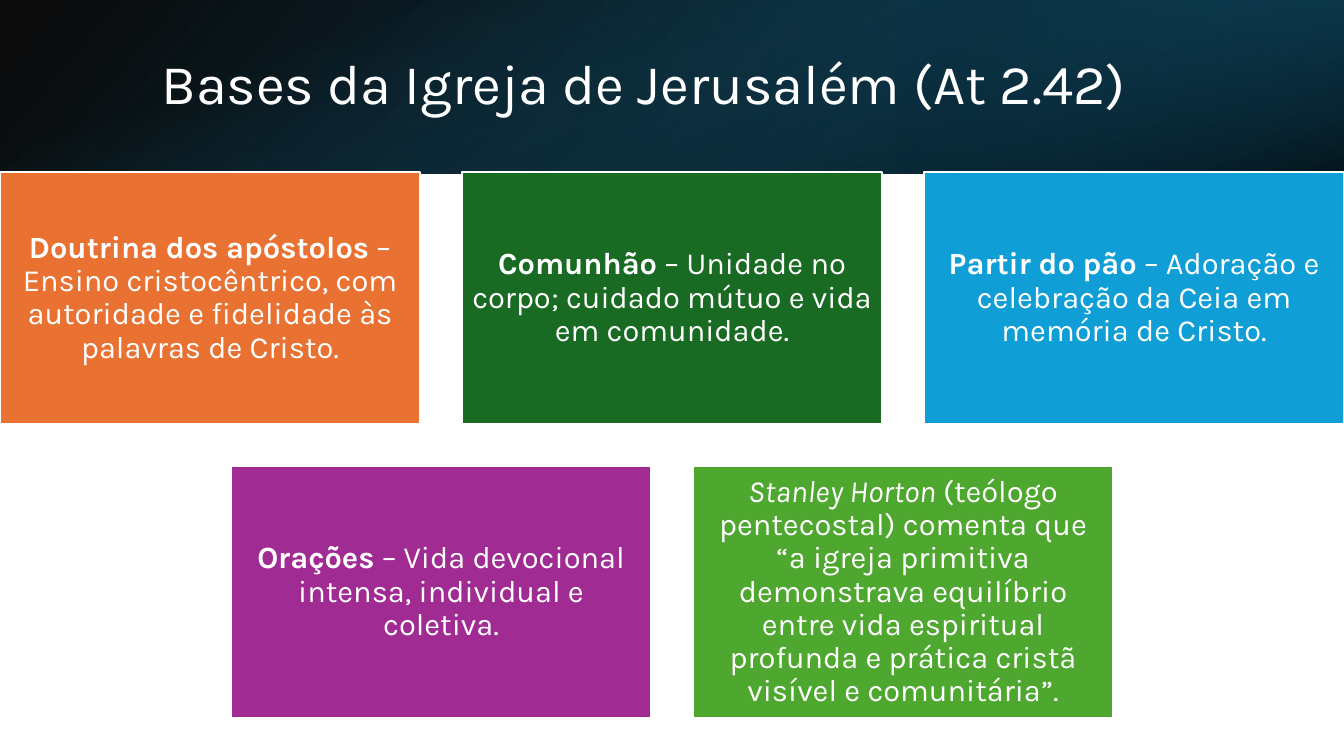
import pptx
import pptx.util
import pptx.dml.color
import pptx.enum.shapes
import pptx.enum.text
import pptx.oxml
import pptx.oxml.ns

RGB = pptx.dml.color.RGBColor
WHITE = RGB(0xFF, 0xFF, 0xFF)
BLACK = RGB(0x00, 0x00, 0x00)
NAVY = RGB(0x10, 0x48, 0x62)
DARK_TEAL = RGB(0x0B, 0x30, 0x41)
TEAL = RGB(0x15, 0x60, 0x82)
ORANGE = RGB(0xE9, 0x71, 0x32)
DARK_GREEN = RGB(0x19, 0x6B, 0x24)
BLUE = RGB(0x0F, 0x9E, 0xD5)
PURPLE = RGB(0xA0, 0x2B, 0x93)
GREEN = RGB(0x4E, 0xA7, 0x2E)

FONT = "Karla"
W, H = 13.33, 7.5
BAND_H = 0.23 * H

# Three cards and two gaps of a tenth of a card fill the width
CARD_W = W / 3.2
CARD_H = 0.6 * CARD_W
GAP = 0.1 * CARD_W
CARDS_TOP = 0.228 * H

CARD_ROWS = [
    [
        (ORANGE, "Doutrina dos apóstolos",
         " – Ensino cristocêntrico, com autoridade e fidelidade às palavras de Cristo.", "bold"),
        (DARK_GREEN, "Comunhão",
         " – Unidade no corpo; cuidado mútuo e vida em comunidade.", "bold"),
        (BLUE, "Partir do pão",
         " – Adoração e celebração da Ceia em memória de Cristo.", "bold"),
    ],
    [
        (PURPLE, "Orações",
         " – Vida devocional intensa, individual e coletiva.", "bold"),
        (GREEN, "Stanley Horton",
         " (teólogo pentecostal) comenta que “a igreja primitiva demonstrava equilíbrio"
         " entre vida espiritual profunda e prática cristã visível e comunitária”.", "italic"),
    ],
]


def inches(*lengths):
    return [pptx.util.Inches(length) for length in lengths]


def add_rect(s, left, top, width, height):
    sp = s.shapes.add_shape(pptx.enum.shapes.MSO_SHAPE.RECTANGLE,
                            *inches(left, top, width, height))
    sp.shadow.inherit = False
    return sp


def add_gradient_band(s, box, stops, angle, rotation=0, flip=False):
    """Add a borderless rectangle; stops are (position, colour, opacity %), angle is clockwise."""
    sp = add_rect(s, *box)
    sp.rotation = rotation
    if flip:
        sp._element.spPr.xfrm.set("flipH", "1")
    sp.line.fill.background()
    sp.fill.gradient()
    sp.fill.gradient_angle = 360 - angle
    for stop, (position, color, _) in zip(sp.fill.gradient_stops, stops):
        stop.position = position
        stop.color.rgb = color
    colors = sp._element.spPr.iter(pptx.oxml.ns.qn("a:srgbClr"))
    for color, (_, _, opacity) in zip(list(colors), stops):
        alpha = pptx.oxml.parse_xml("<a:alpha %s/>" % pptx.oxml.ns.nsdecls("a"))
        alpha.set("val", str(opacity * 1000))
        color.append(alpha)


def add_run(p, text, size, style=None):
    r = p.add_run()
    r.text = text
    r.font.name = FONT
    r.font.size = pptx.util.Pt(size)
    r.font.color.rgb = WHITE
    r.font.bold = style == "bold"
    r.font.italic = style == "italic"


def start_text(sp, align):
    """Set up a middle-anchored frame and return its first paragraph."""
    tf = sp.text_frame
    tf.word_wrap = True
    tf.auto_size = pptx.enum.text.MSO_AUTO_SIZE.NONE
    tf.vertical_anchor = pptx.enum.text.MSO_ANCHOR.MIDDLE
    p = tf.paragraphs[0]
    p.alignment = align
    p.line_spacing = 0.9
    return p


def set_title(s, text):
    title = s.shapes.title
    title.left, title.top, title.width, title.height = inches(1.5, 0.38, 10.98, 0.96)
    add_run(start_text(title, pptx.enum.text.PP_ALIGN.LEFT), text, 40)
    s.shapes._spTree.append(title._element)  # in front of the bands


def add_card(s, left, top, color, lead, body, lead_style):
    sp = add_rect(s, left, top, CARD_W, CARD_H)
    sp.fill.solid()
    sp.fill.fore_color.rgb = color
    sp.line.color.rgb = WHITE
    sp.line.width = pptx.util.Pt(1.5)
    p = start_text(sp, pptx.enum.text.PP_ALIGN.CENTER)
    tf = sp.text_frame
    tf.margin_left, tf.margin_top, tf.margin_right, tf.margin_bottom = inches(*[0.09] * 4)
    add_run(p, lead, 22, lead_style)
    add_run(p, body, 22)


def add_card_row(s, row, cards):
    """Add one row of cards, centred on the slide."""
    step = CARD_W + GAP
    left = (W - len(cards) * step + GAP) / 2
    top = CARDS_TOP + row * (CARD_H + GAP)
    for column, card in enumerate(cards):
        add_card(s, left + column * step, top, *card)


def main():
    prs = pptx.Presentation()
    prs.slide_width, prs.slide_height = inches(W, H)
    s = prs.slides.add_slide(prs.slide_layouts.get_by_name("Title Only"))

    add_gradient_band(s, (0, 0, W, BAND_H),
                      [(0, BLACK, 96), (1, NAVY, 100)], 140, flip=True)
    add_gradient_band(s, (W * 2 / 3, 0, W / 3, BAND_H),
                      [(0.19, DARK_TEAL, 68), (1, TEAL, 79)], 320, rotation=180, flip=True)
    add_gradient_band(s, ((W - BAND_H) / 2, (BAND_H - W) / 2, BAND_H, W),
                      [(0.23, TEAL, 0), (0.99, BLACK, 74)], 340, rotation=90)
    set_title(s, "Bases da Igreja de Jerusalém (At 2.42)")
    for row, cards in enumerate(CARD_ROWS):
        add_card_row(s, row, cards)

    prs.save("out.pptx")


if __name__ == "__main__":
    main()
